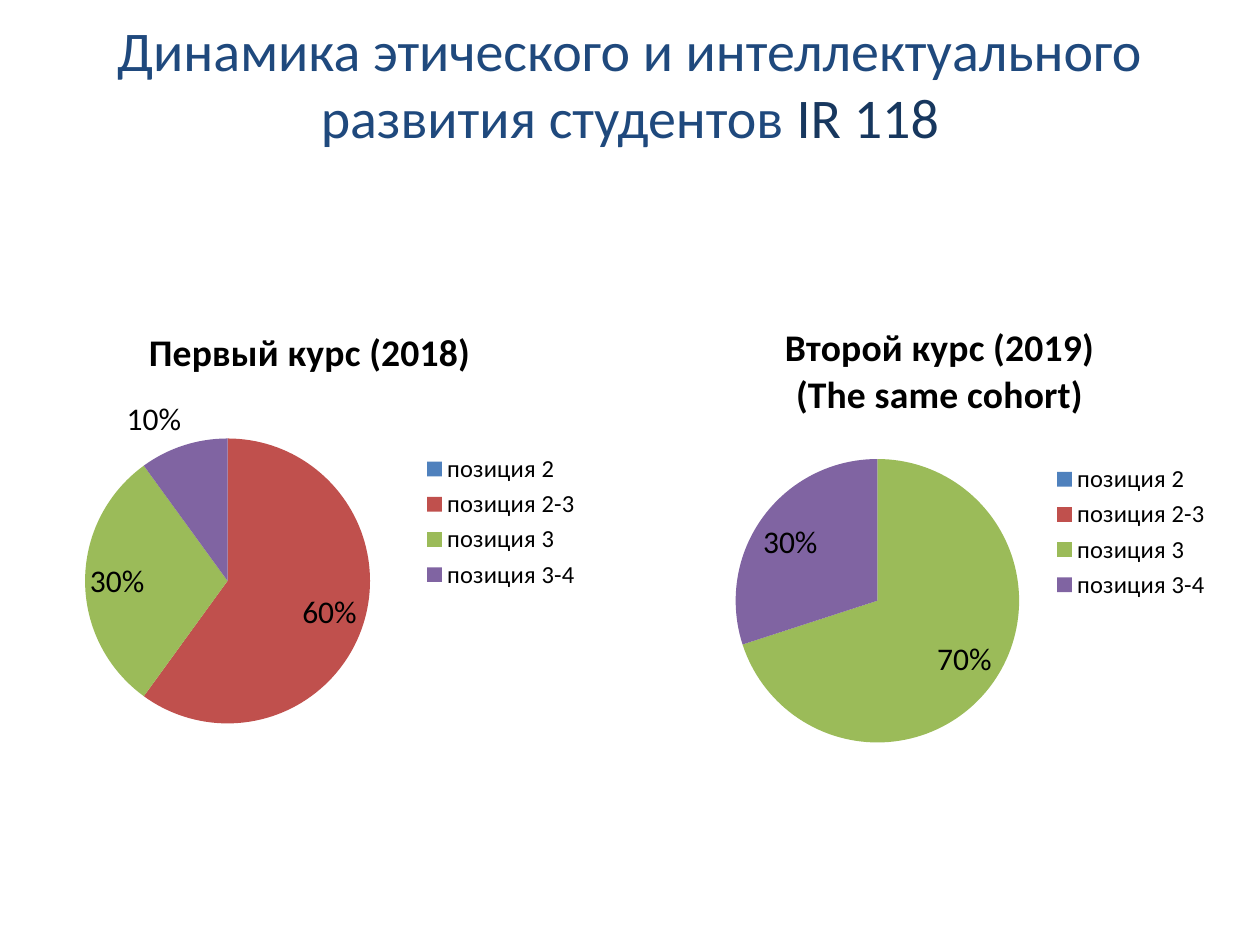
from dataclasses import dataclass

from pptx import Presentation
from pptx.chart.data import CategoryChartData
from pptx.dml.color import RGBColor
from pptx.enum.chart import XL_CHART_TYPE, XL_LABEL_POSITION, XL_LEGEND_POSITION
from pptx.enum.text import MSO_ANCHOR, PP_ALIGN
from pptx.oxml import parse_xml
from pptx.oxml.ns import nsdecls
from pptx.slide import Slide
from pptx.util import Cm, Pt

COLOURS = {
    "title": "1F497D",
    "group": "17375E",
    "text": "000000",
    "позиция 2": "4F81BD",
    "позиция 2-3": "C0504D",
    "позиция 3": "9BBB59",
    "позиция 3-4": "8064A2",
}
POSITIONS = [name for name in COLOURS if name.startswith("позиция")]
COURSES = [
    dict(left=0.53, height=8.84, title=["Первый курс (2018)"],
         values=[0, 60, 30, 10], plot=dict(x=0.1, y=0.31, w=0.51, h=0.65)),
    dict(left=13.23, height=9.25, title=["Второй курс (2019)", "(The same cohort)"],
         values=[0, 0, 70, 30], plot=dict(x=0.14, y=0.34, w=0.5, h=0.62)),
]


def format_font(font, size, colour, bold=False, name="Calibri"):
    font.name = name
    font.size = Pt(size)
    font.bold = bold
    font.color.rgb = RGBColor.from_string(COLOURS[colour])


def add_span(para, text, **style):
    span = para.add_run()
    span.text = text
    format_font(span.font, **style)


@dataclass
class CohortPage:
    """Draws the elements of a page in one shared style."""

    page: Slide
    title_size: float = 32
    heading_size: float = 21.5
    label_size: float = 18
    legend_size: float = 14

    def add_title(self, spans):
        frame = self.page.shapes.add_textbox(Cm(1.27), Cm(0.76), Cm(22.86), Cm(3.18)).text_frame
        frame.word_wrap = True
        frame.vertical_anchor = MSO_ANCHOR.MIDDLE
        frame.margin_bottom = Cm(1.5)
        para = frame.paragraphs[0]
        para.alignment = PP_ALIGN.CENTER
        for text, colour in spans:
            add_span(para, text, size=self.title_size, colour=colour)

    def add_pie(self, left, height, title, values, plot):
        data = CategoryChartData()
        data.categories = POSITIONS
        data.add_series("Series 1", values)
        chart = self.page.shapes.add_chart(
            XL_CHART_TYPE.PIE, Cm(left), Cm(6.1), Cm(11.43), Cm(height), data).chart
        format_font(chart.font, self.label_size, "text")
        self.add_heading(chart, title)
        self.add_legend(chart)
        self.place_plot(chart, plot)
        self.style_slices(chart.plots[0], values)

    def add_heading(self, chart, lines):
        chart.has_title = True
        frame = chart.chart_title.text_frame
        chart.chart_title.include_in_layout = False
        for index, line in enumerate(lines):
            para = frame.add_paragraph() if index else frame.paragraphs[0]
            add_span(para, line, size=self.heading_size, colour="text", bold=True)

    def add_legend(self, chart):
        chart.has_legend = True
        chart.legend.position = XL_LEGEND_POSITION.RIGHT
        chart.legend.include_in_layout = False
        format_font(chart.legend.font, self.legend_size, "text")

    def place_plot(self, chart, plot):
        area = chart.plots[0]._element.getparent()
        for layout in area.findall("{*}layout"):
            area.remove(layout)
        sizes = "".join(f'<c:{key} val="{value}"/>' for key, value in plot.items())
        area.insert(0, parse_xml(
            f'<c:layout {nsdecls("c")}><c:manualLayout><c:layoutTarget val="inner"/>'
            f'<c:xMode val="edge"/><c:yMode val="edge"/>{sizes}</c:manualLayout></c:layout>'))

    def style_slices(self, pie, values):
        pie.vary_by_categories = True
        series = pie.series[0]
        for index, position in enumerate(POSITIONS):
            fill = series.points[index].format.fill
            fill.solid()
            fill.fore_color.rgb = RGBColor.from_string(COLOURS[position])
        labels = series.data_labels
        labels.show_value = False
        labels.show_percentage = True
        labels.number_format = "0%"
        labels.number_format_is_linked = False
        labels.position = XL_LABEL_POSITION.BEST_FIT
        format_font(labels.font, self.label_size, "text")
        empty = [index for index, value in enumerate(values) if value == 0]
        for place, index in enumerate(empty):
            labels._element.insert(place, parse_xml(
                f'<c:dLbl {nsdecls("c")}><c:idx val="{index}"/><c:delete val="1"/></c:dLbl>'))


def main():
    deck = Presentation()
    deck.slide_width, deck.slide_height = Cm(25.4), Cm(19.05)
    cohort = CohortPage(deck.slides.add_slide(deck.slide_layouts[6]))
    cohort.add_title([
        ("Динамика этического и интеллектуального развития студентов ", "title"),
        ("IR 118", "group"),
    ])
    for course in COURSES:
        cohort.add_pie(**course)
    deck.save("out.pptx")


if __name__ == "__main__":
    main()
